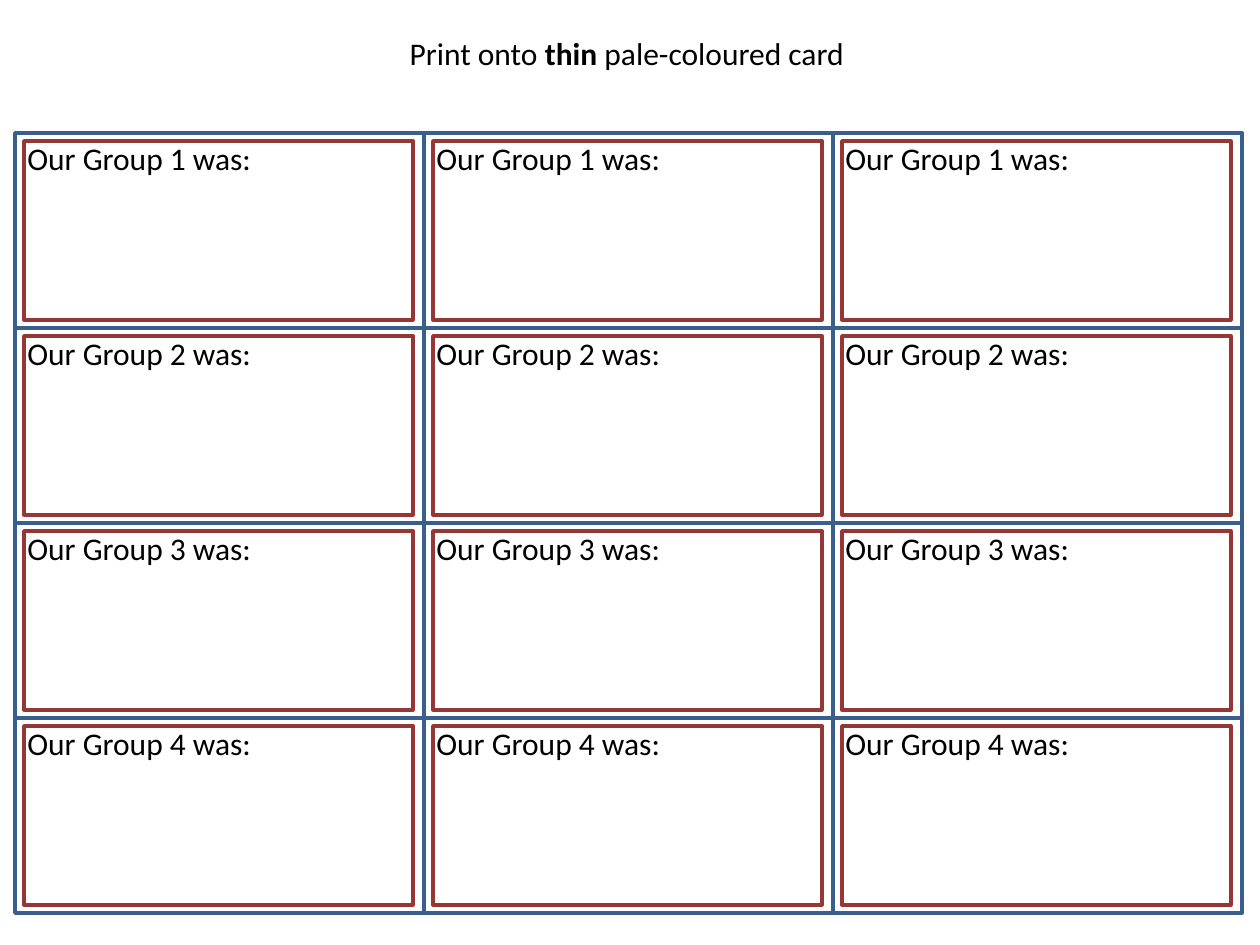
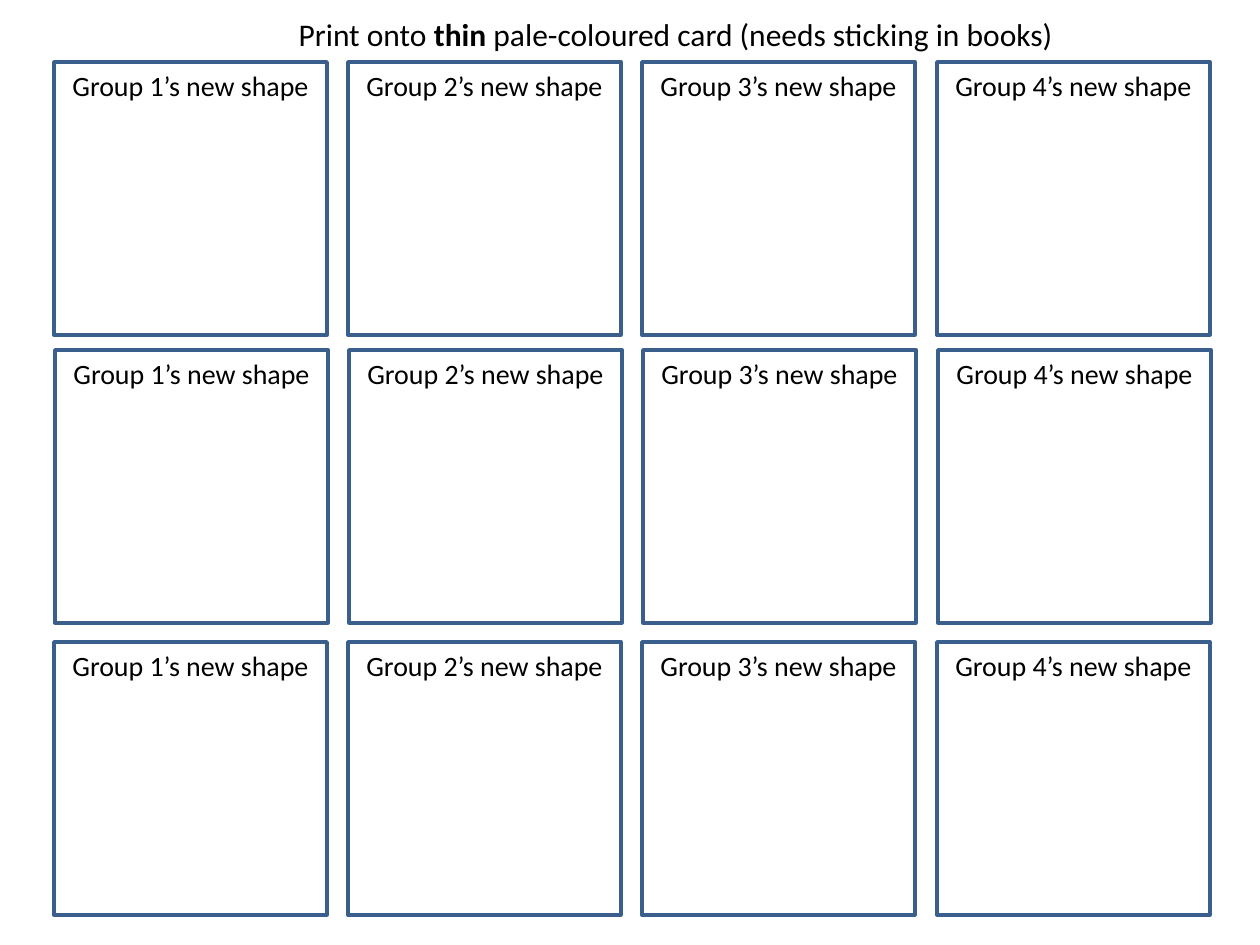
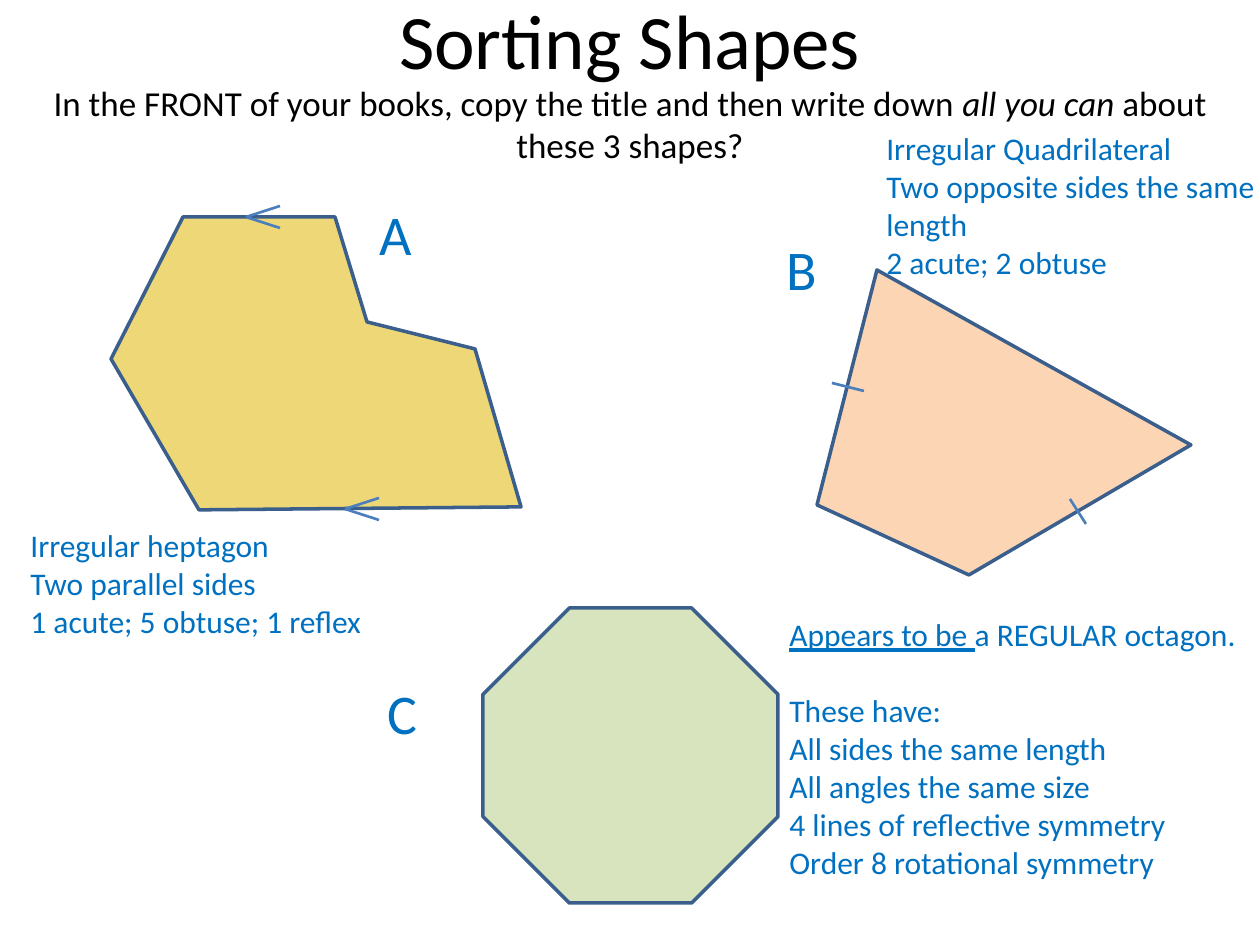
from lxml import etree
from pptx import Presentation
from pptx.dml.color import RGBColor
from pptx.enum.shapes import MSO_CONNECTOR, MSO_SHAPE
from pptx.enum.text import MSO_ANCHOR, MSO_AUTO_SIZE, PP_ALIGN
from pptx.oxml.ns import qn
from pptx.util import Pt

PX = 914400 // 126
RECT, OCTAGON = MSO_SHAPE.RECTANGLE, MSO_SHAPE.OCTAGON
STRAIGHT = MSO_CONNECTOR.STRAIGHT
TOP, MIDDLE = MSO_ANCHOR.TOP, MSO_ANCHOR.MIDDLE
LEFT, CENTER = PP_ALIGN.LEFT, PP_ALIGN.CENTER
FIT, FIXED = MSO_AUTO_SIZE.SHAPE_TO_FIT_TEXT, MSO_AUTO_SIZE.NONE
TITLE_ONLY = 5
FONT = "Calibri"
BLACK, EDGE, FRAME = "000000", "3A5F8C", "953735"
MARK, ANSWER = "4B7EBC", "0070C0"
GOLD, PEACH, GREEN = "EDD777", "FCD5B5", "D7E4BD"


def px(*nums):
    """Turn px lengths into EMU."""
    return [num * PX for num in nums]


def hue(code):
    """Turn a hex string into a colour."""
    return RGBColor.from_string(code)


def write(shape, text, size=18, color=BLACK, align=LEFT, anchor=TOP,
          wrap=True, auto=FIXED, mark="bold"):
    """Fill a shape with text, marking the parts that stand between bars."""
    frame = shape.text_frame
    frame.word_wrap, frame.auto_size = wrap, auto
    frame.vertical_anchor = anchor
    frame.text = text.replace("|", "")
    for para, line in zip(frame.paragraphs, text.split("\n")):
        para.alignment = align
        para.text = ""
        for spot, part in enumerate(line.split("|")):
            if part:
                run = para.add_run()
                run.text = part
                run.font.name, run.font.size = FONT, Pt(size)
                run.font.color.rgb = hue(color)
                if spot % 2:
                    setattr(run.font, mark, True)
    return frame


def style(shape, line=EDGE, fill=None):
    """Give a shape its outline and fill, without shadow."""
    shape.shadow.inherit = False
    shape.line.color.rgb, shape.line.width = hue(line), Pt(2)
    if fill:
        shape.fill.solid()
        shape.fill.fore_color.rgb = hue(fill)
    else:
        shape.fill.background()
    return shape


def block(slide, kind, box, line=EDGE, fill=None):
    """Add a preset shape in a box."""
    return style(slide.shapes.add_shape(kind, *px(*box)), line, fill)


def label(slide, box, text, **look):
    """Add a text box."""
    return write(slide.shapes.add_textbox(*px(*box)), text, **look)


def start(deck, box, text, **look):
    """Add a slide with its title placed in a box."""
    slide = deck.slides.add_slide(deck.slide_layouts[TITLE_ONLY])
    title = slide.shapes.title
    title.left, title.top, title.width, title.height = px(*box)
    write(title, text, **look)
    return slide


def group_cards(slide, box):
    """Fill a box with three columns of framed group cards."""
    left, top, width, height = box
    wide, high = width // 3, height // 4
    spots = [(left + col * wide, top + row * high, row + 1)
             for col in range(3) for row in range(4)]
    for x, y, num in spots:
        card = block(slide, RECT, (x, y, wide, high))
        write(card, f"Our Group {num} was:")
    for x, y, num in spots:
        block(slide, RECT, (x + 9, y + 8, wide - 20, high - 16), FRAME)


def shape_cards(slide, box):
    """Fill a box with three rows of square cards, one per group."""
    left, top, width, side = box
    for drop, shift in ((0, 0), (288, 1), (580, 0)):
        for col in range(4):
            x = left + shift + col * (width - side) // 3
            card = block(slide, RECT, (x, top + drop, side, side))
            write(card, f"Group {col + 1}’s new shape", 16, align=CENTER)


def polygon(slide, spot, points, fill, marks):
    """Group an outline with its side marks, relative to a spot."""
    left, top = spot
    shapes = slide.shapes.add_group_shape().shapes
    pen = shapes.build_freeform(*points[0], scale=PX)
    pen.add_line_segments(points[1:], close=True)
    style(pen.convert_to_shape(*px(left, top)), fill=fill)
    for x1, y1, x2, y2 in marks:
        ends = px(left + x1, top + y1, left + x2, top + y2)
        line = shapes.add_connector(STRAIGHT, *ends)
        line.line.color.rgb, line.line.width = hue(MARK), Pt(1.5)
        etree.SubElement(line.element.spPr, qn("a:effectLst"))


def heptagon(slide, spot):
    """Draw the heptagon with arrows on its parallel sides."""
    points = [(72, 0), (224, 0), (256, 105), (364, 132),
              (410, 290), (88, 293), (0, 142)]
    marks = [(x, y, x + 34, y + rise)
             for x, y in ((135, 0), (234, 292)) for rise in (11, -11)]
    polygon(slide, spot, points, GOLD, marks)


def kite(slide, spot):
    """Draw the quadrilateral with ticks on its equal sides."""
    points = [(60, 0), (0, 235), (152, 305), (374, 175)]
    marks = [(15, 113, 47, 121), (253, 229, 269, 254)]
    polygon(slide, spot, points, PEACH, marks)


def answers(slide):
    """Name the three shapes and describe them."""
    for text, x, y in (("A", 367, 193), ("B", 774, 228), ("C", 375, 672)):
        label(slide, (x, y, 58, 81), text, size=32, color=ANSWER,
              wrap=False, auto=FIT)
    label(slide, (18, 520, 360, 127),
          "Irregular heptagon\nTwo parallel sides\n"
          "1 acute; 5 obtuse; 1 reflex",
          color=ANSWER, wrap=False, auto=FIT)
    label(slide, (874, 123, 412, 165),
          "Irregular Quadrilateral\nTwo opposite sides the same length\n"
          "2 acute; 2 obtuse", color=ANSWER, auto=FIT)
    notes = label(slide, (777, 609, 486, 280),
                  "|Appears to be |a REGULAR octagon.\nThese have:\n"
                  "All sides the same length\nAll angles the same size\n"
                  "4 lines of reflective symmetry\n"
                  "Order 8 rotational symmetry",
                  color=ANSWER, auto=FIT, mark="underline")
    notes.paragraphs[1].space_before = Pt(22)


def main():
    """Build the three slides."""
    deck = Presentation()
    deck.slide_width, deck.slide_height = px(1260, 945)

    slide = start(deck, (397, 28, 464, 50),
                  "Print onto |thin| pale-coloured card",
                  wrap=False, auto=FIT)
    group_cards(slide, (15, 133, 1227, 780))

    slide = start(deck, (286, 9, 789, 50),
                  "Print onto |thin| pale-coloured card "
                  "(needs sticking in books)", wrap=False, auto=FIT)
    shape_cards(slide, (54, 62, 1156, 273))

    slide = start(deck, (0, -24, 1260, 126), "Sorting Shapes", size=44,
                  align=CENTER, anchor=MIDDLE)
    label(slide, (0, 61, 1260, 126),
          "In the FRONT of your books, copy the title and then write down "
          "|all you can |about these 3 shapes?", size=20, align=CENTER,
          anchor=MIDDLE, mark="italic")
    heptagon(slide, (111, 217))
    kite(slide, (817, 270))
    block(slide, OCTAGON, (483, 608, 295, 295), fill=GREEN)
    answers(slide)
    deck.save("out.pptx")


if __name__ == "__main__":
    main()
